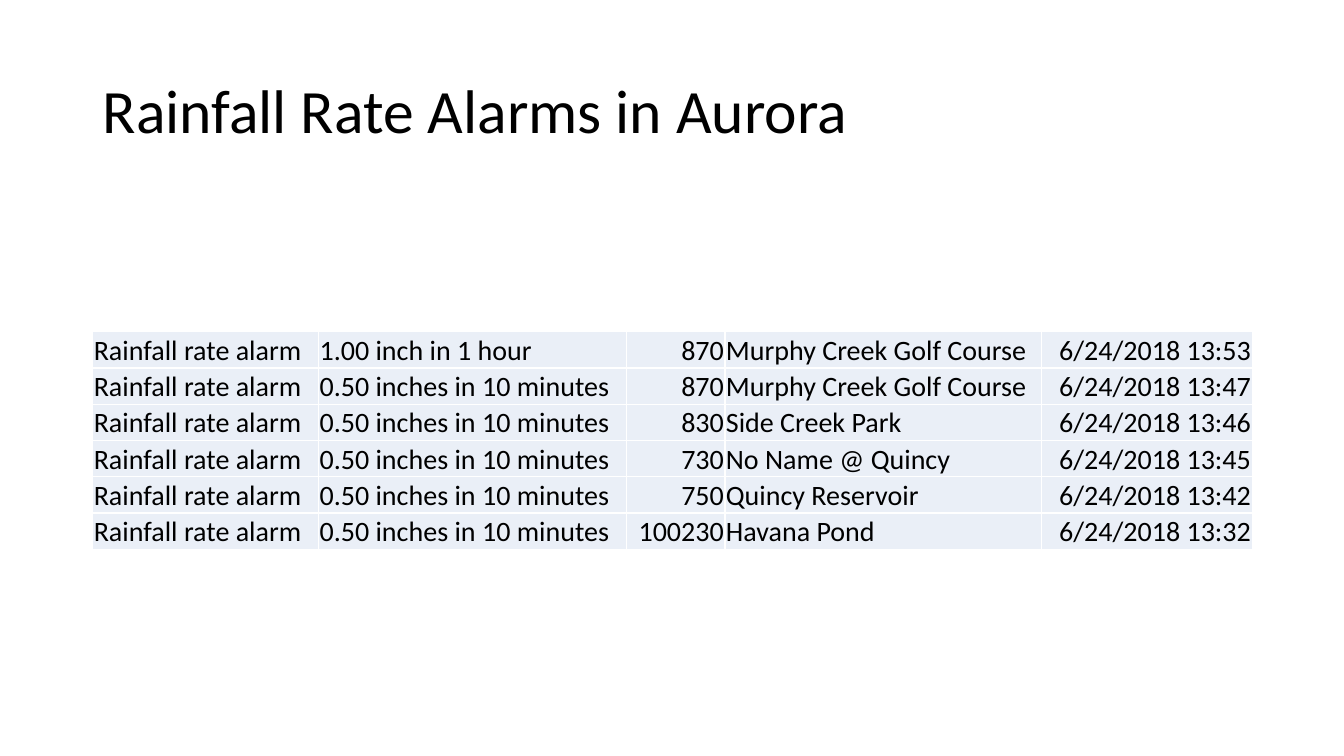
from lxml import etree
from pptx import Presentation
from pptx.dml.color import RGBColor
from pptx.enum import text
from pptx.oxml import ns
from pptx.util import Inches, Pt

BLACK = RGBColor(0x00, 0x00, 0x00)
WHITE = RGBColor(0xFF, 0xFF, 0xFF)
PALE_BLUE = RGBColor(0xEA, 0xEF, 0xF7)
FONT = "Calibri"
LEFT, WIDTH = 0.92, 11.5

COL_WIDTHS = [2.24, 3.05, 0.98, 3.14, 2.09]
ROW_HEIGHT = 0.36
RIGHT_COLS = (2, 4)  # station number and time

# Rate, station number, station, time of day
ALARMS = [
    ("1.00 inch in 1 hour", "870", "Murphy Creek Golf Course", "13:53"),
    ("0.50 inches in 10 minutes", "870", "Murphy Creek Golf Course", "13:47"),
    ("0.50 inches in 10 minutes", "830", "Side Creek Park", "13:46"),
    ("0.50 inches in 10 minutes", "730", "No Name @ Quincy", "13:45"),
    ("0.50 inches in 10 minutes", "750", "Quincy Reservoir", "13:42"),
    ("0.50 inches in 10 minutes", "100230", "Havana Pond", "13:32"),
]


def set_font(p, size):
    p.font.name = FONT
    p.font.size = Pt(size)
    p.font.color.rgb = BLACK


def add_title(s, title):
    sp = s.shapes.add_textbox(Inches(LEFT), Inches(0.4), Inches(WIDTH), Inches(1.45))
    tf = sp.text_frame
    tf.word_wrap = True
    tf.vertical_anchor = text.MSO_ANCHOR.MIDDLE
    p = tf.paragraphs[0]
    p.text = title
    p.line_spacing = 0.9
    set_font(p, 44)


def set_borders(cell, color, width):
    tc_pr = cell._tc.get_or_add_tcPr()
    for side in ("lnL", "lnR", "lnT", "lnB"):
        ln = etree.SubElement(tc_pr, ns.qn(f"a:{side}"), w=str(Pt(width)))
        fill = etree.SubElement(ln, ns.qn("a:solidFill"))
        etree.SubElement(fill, ns.qn("a:srgbClr"), val=str(color))


def fill_cell(cell, value, align):
    cell.margin_left = cell.margin_right = cell.margin_top = Inches(0.01)
    cell.margin_bottom = 0
    cell.vertical_anchor = text.MSO_ANCHOR.BOTTOM
    set_borders(cell, WHITE, 1)
    cell.fill.solid()
    cell.fill.fore_color.rgb = PALE_BLUE
    p = cell.text_frame.paragraphs[0]
    p.text = value
    p.alignment = align
    set_font(p, 20)


def add_alarm_table(s, alarms):
    table = s.shapes.add_table(
        len(alarms), len(COL_WIDTHS), Inches(LEFT), Inches(3.29),
        Inches(WIDTH), Inches(ROW_HEIGHT * len(alarms))).table
    table.first_row = table.horz_banding = False
    for column, width in zip(table.columns, COL_WIDTHS):
        column.width = Inches(width)
    for i, (rate, number, station, time) in enumerate(alarms):
        table.rows[i].height = Inches(ROW_HEIGHT)
        values = ("Rainfall rate alarm", rate, number, station, f"6/24/2018 {time}")
        for j, value in enumerate(values):
            align = text.PP_ALIGN.RIGHT if j in RIGHT_COLS else text.PP_ALIGN.LEFT
            fill_cell(table.cell(i, j), value, align)


def main():
    prs = Presentation()
    prs.slide_width, prs.slide_height = Inches(13.33), Inches(7.5)
    s = prs.slides.add_slide(prs.slide_layouts[6])
    add_title(s, "Rainfall Rate Alarms in Aurora")
    add_alarm_table(s, ALARMS)
    prs.save("out.pptx")


if __name__ == "__main__":
    main()
